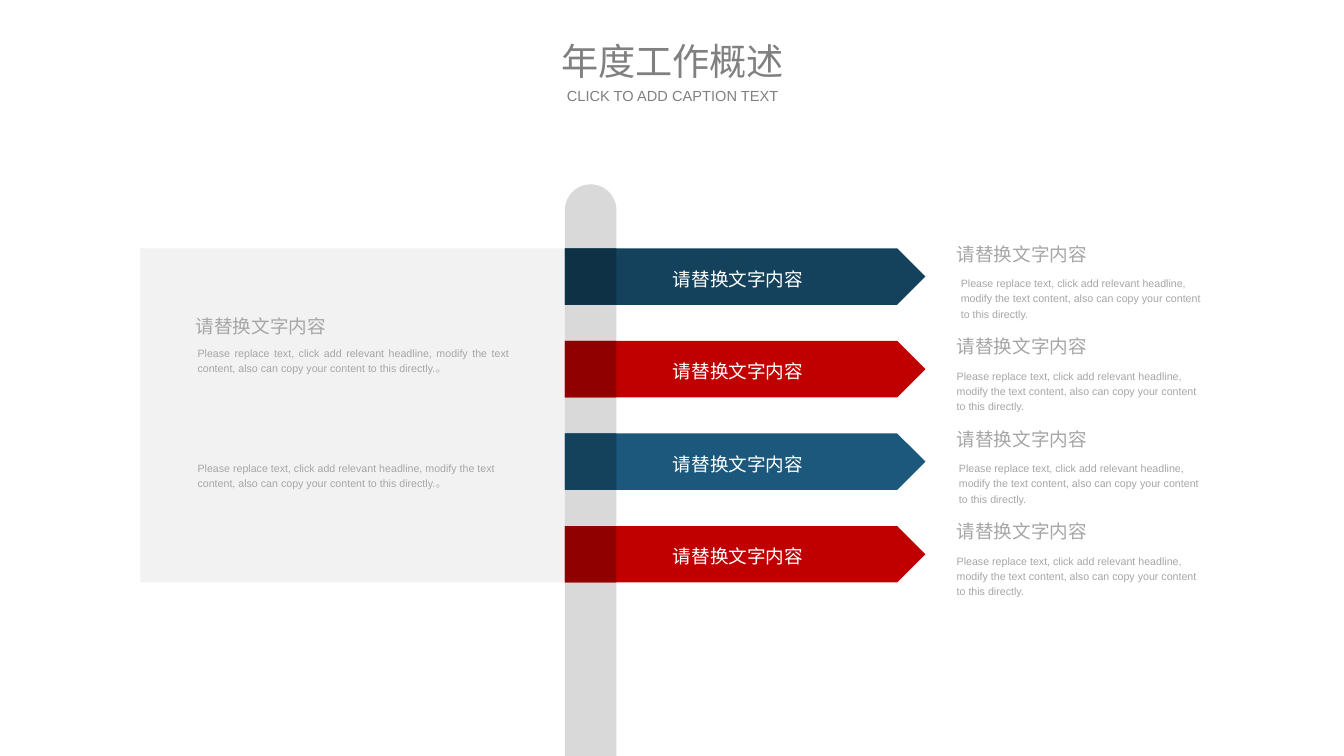
from pptx import Presentation
from pptx.dml.color import RGBColor
from pptx.enum.shapes import MSO_SHAPE
from pptx.enum.text import MSO_ANCHOR, MSO_AUTO_SIZE, PP_ALIGN
from pptx.util import Cm, Pt

HEADING = "请替换文字内容"
BODY = ("Please replace text, click add relevant headline, modify the text content, "
        "also can copy your content to this directly.")
GREY = "A6A6A6"

presentation = Presentation()
presentation.slide_width = Cm(35.71)
presentation.slide_height = Cm(20.09)
slide = presentation.slides.add_slide(presentation.slide_layouts[6])


def add_block(kind, left, top, width, height, fill):
    shape = slide.shapes.add_shape(kind, Cm(left), Cm(top), Cm(width), Cm(height))
    shape.shadow.inherit = False
    shape.fill.solid()
    shape.fill.fore_color.rgb = RGBColor.from_string(fill)
    shape.line.fill.background()
    return shape


def write(shape, text, size, color, align=PP_ALIGN.LEFT, spacing=1.2):
    paragraph = shape.text_frame.paragraphs[0]
    paragraph.text = text
    paragraph.alignment = align
    paragraph.line_spacing = spacing
    paragraph.font.size = Pt(size)
    paragraph.font.name = "Arial"
    paragraph.font.color.rgb = RGBColor.from_string(color)


add_block(MSO_SHAPE.RECTANGLE, 3.73, 6.6, 11.3, 8.88, "F2F2F2")

pole_left, pole_width = 15.01, 1.37
pole = add_block(MSO_SHAPE.ROUND_2_SAME_RECTANGLE, pole_left, 4.9, pole_width, 15.19, "D9D9D9")
pole.adjustments[0] = 0.5
pole.adjustments[1] = 0

text_boxes = [
    (4.95, 8.13, 4.27, 0.91, HEADING, 14, PP_ALIGN.LEFT),
    (5, 9.02, 8.79, 1.04, BODY + "。", 8, PP_ALIGN.JUSTIFY),
    (5, 12.09, 8.79, 1.04, BODY + "。", 8, PP_ALIGN.LEFT),
]

arrow_height, row_pitch = 1.5, 2.46
rows = [
    ("14425D", "0F3146", 25.28),
    ("C00000", "900000", 25.17),
    ("1B587C", "14425D", 25.23),
    ("C00000", "900000", 25.17),
]
for index, (arrow_color, fold_color, body_left) in enumerate(rows):
    top = 6.6 + index * row_pitch
    arrow = add_block(MSO_SHAPE.PENTAGON, pole_left, top, 9.58, arrow_height, arrow_color)
    arrow.text_frame.vertical_anchor = MSO_ANCHOR.MIDDLE
    write(arrow, HEADING, 14, "FFFFFF", PP_ALIGN.CENTER)
    add_block(MSO_SHAPE.RECTANGLE, pole_left, top, pole_width, arrow_height, fold_color)
    text_boxes.append((25.17, top - 0.4, 4.27, 0.91, HEADING, 14, PP_ALIGN.LEFT))
    text_boxes.append((body_left, top + 0.57, 6.93, 1.45, BODY, 8, PP_ALIGN.LEFT))

for left, top, width, height, text, size, align in text_boxes:
    text_box = slide.shapes.add_textbox(Cm(left), Cm(top), Cm(width), Cm(height))
    text_box.text_frame.word_wrap = True
    text_box.text_frame.auto_size = MSO_AUTO_SIZE.SHAPE_TO_FIT_TEXT
    write(text_box, text, size, GREY, align)

titles = [
    (0.99, 1.24, "年度工作概述", 28),
    (2.29, 0.48, "CLICK TO ADD CAPTION TEXT", 11),
]
for top, height, text, size in titles:
    title = slide.shapes.add_textbox(Cm(14.66), Cm(top), Cm(6.43), Cm(height))
    frame = title.text_frame
    frame.word_wrap = True
    frame.auto_size = MSO_AUTO_SIZE.SHAPE_TO_FIT_TEXT
    frame.vertical_anchor = MSO_ANCHOR.MIDDLE
    frame.margin_left = frame.margin_right = frame.margin_top = frame.margin_bottom = 0
    write(title, text, size, "808080", PP_ALIGN.CENTER, 1.0)

presentation.save("out.pptx")
